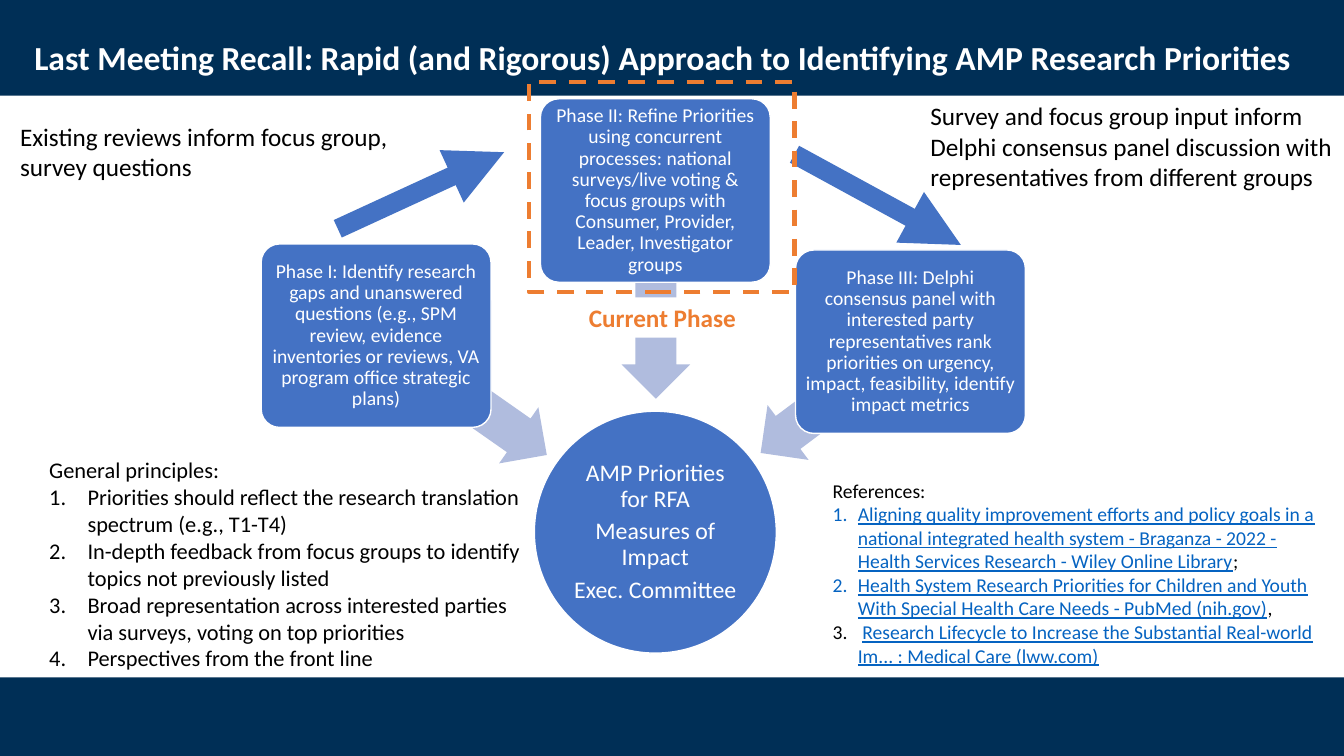
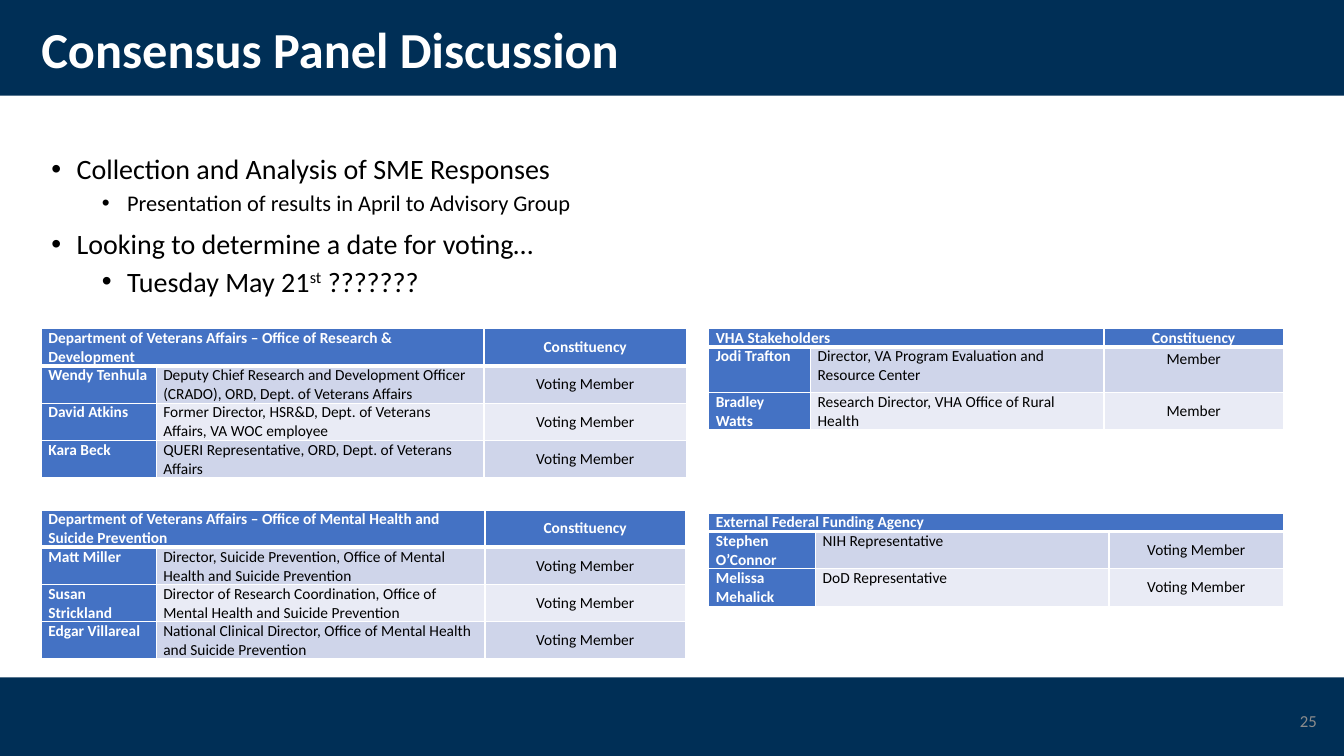
import pptx
import pptx.chart.data
import pptx.dml.color
import pptx.enum.dml
import pptx.enum.shapes
import pptx.enum.text
import pptx.oxml
import pptx.oxml.ns
import pptx.util
from lxml import etree

Inches, Pt = pptx.util.Inches, pptx.util.Pt
RGB = pptx.dml.color.RGBColor
SHAPE = pptx.enum.shapes.MSO_SHAPE
ALIGN = pptx.enum.text.PP_ALIGN
ANCHOR = pptx.enum.text.MSO_ANCHOR
qn = pptx.oxml.ns.qn

# Shared look
FONT = "Calibri"
NAVY, BLUE, PALE_BLUE = RGB(0x00, 0x2F, 0x56), RGB(0x44, 0x72, 0xC4), RGB(0xB0, 0xBC, 0xDE)
ORANGE, LINK, GREY = RGB(0xED, 0x7D, 0x31), RGB(0x05, 0x63, 0xC1), RGB(0x8C, 0x8C, 0x8C)
WHITE, BLACK = RGB(0xFF, 0xFF, 0xFF), RGB(0, 0, 0)
ROW_FILLS = [RGB(0xCF, 0xD5, 0xEA), RGB(0xE9, 0xEB, 0xF5)]
BANDS = [(0, 0, 13.33, 0.95), (0, 6.72, 13.33, 0.8)]

# Slide 1 content
RECALL_TITLE = "Last Meeting Recall: Rapid (and Rigorous) Approach to Identifying AMP Research Priorities"
OUTCOMES = ["AMP Priorities for RFA", "Measures of Impact", "Exec. Committee"]
PHASE_SIZE = (2.28, 1.82)
PHASES = [  # left and top of the phase, then place and turn of its arrow
    ((2.59, 2.42), (3.54, 3.58, 2.07, 0.68), 215,
     "Phase I: Identify research gaps and unanswered questions (e.g., SPM review, evidence "
     "inventories or reviews, VA program office strategic plans)"),
    ((5.36, 0.98), (5.47, 2.58, 2.07, 0.68), 270,
     "Phase II: Refine Priorities using concurrent processes: national surveys/live voting & "
     "focus groups with Consumer, Provider, Leader, Investigator groups"),
    ((7.89, 2.48), (7.36, 3.6, 1.85, 0.68), 323.2,
     "Phase III: Delphi consensus panel with interested party representatives rank priorities "
     "on urgency, impact, feasibility, identify impact metrics"),
]
PHASE_LINKS = [((3.35, 2.27), (5, 1.51)), ((7.88, 1.53), (9.53, 2.43))]
CAPTIONS = [
    ((9.13, 0.95, 4.2, 1.01), "Survey and focus group input inform Delphi consensus panel "
                              "discussion with representatives from different groups"),
    ((0.1, 1.15, 4.08, 0.71), "Existing reviews inform focus group, survey questions"),
]
REFERENCES = [  # text before, linked text, text after
    ("", "Aligning quality improvement efforts and policy goals in a national integrated health "
         "system - Braganza - 2022 - Health Services Research - Wiley Online Library", ";"),
    ("", "Health System Research Priorities for Children and Youth With Special Health Care "
         "Needs - PubMed (nih.gov)", ","),
    (" ", "Research Lifecycle to Increase the Substantial Real-world Im... : "
          "Medical Care (lww.com)", ""),
]
PRINCIPLES = [
    "Priorities should reflect the research translation spectrum (e.g., T1-T4)",
    "In-depth feedback from focus groups to identify topics not previously listed",
    "Broad representation across interested parties via surveys, voting on top priorities",
    "Perspectives from the front line",
]

# Slide 2 content
PANEL_TITLE = "Consensus Panel Discussion"
AGENDA = [  # level, size, text, superscript, text after
    (0, 20, "Collection and Analysis of SME Responses", "", ""),
    (1, 16, "Presentation of results in April to Advisory Group", "", ""),
    (0, 20, "Looking to determine a date for voting…", "", ""),
    (1, 20, "Tuesday May 21", "st", " ???????"),
]
VOTER = "Voting Member"
PANELS = [
    {"at": (0.41, 3.26), "columns": (1.14, 3.25, 2.01), "heights": (0.37,) * 4,
     "head": ("Department of Veterans Affairs – Office of Research & Development", "Constituency"),
     "members": [
         ("Wendy Tenhula", "Deputy Chief Research and Development Officer (CRADO), ORD, "
                           "Dept. of Veterans Affairs", VOTER),
         ("David Atkins", "Former Director, HSR&D, Dept. of Veterans Affairs, VA WOC employee", VOTER),
         ("Kara Beck", "QUERI Representative, ORD, Dept. of Veterans Affairs", VOTER)]},
    {"at": (0.41, 5.06), "columns": (1.14, 3.26, 1.99), "heights": (0.37,) * 4,
     "head": ("Department of Veterans Affairs – Office of Mental Health and Suicide Prevention",
              "Constituency"),
     "members": [
         ("Matt Miller", "Director, Suicide Prevention, Office of Mental Health and "
                         "Suicide Prevention", VOTER),
         ("Susan Strickland", "Director of Research Coordination, Office of Mental Health and "
                              "Suicide Prevention", VOTER),
         ("Edgar Villareal", "National Clinical Director, Office of Mental Health and "
                             "Suicide Prevention", VOTER)]},
    {"at": (7.03, 3.26), "columns": (1.01, 2.91, 1.78), "heights": (0.18, 0.45, 0.37),
     "head": ("VHA Stakeholders", "Constituency"), "raised_row": 1,
     "members": [
         ("Jodi Trafton", "Director, VA Program Evaluation and Resource Center", "Member"),
         ("Bradley Watts", "Research Director, VHA Office of Rural Health", "Member")]},
    {"at": (7.03, 5.09), "columns": (1.06, 2.91, 1.73), "heights": (0.18, 0.37, 0.37),
     "head": ("External Federal Funding Agency",),
     "members": [("Stephen O’Connor", "NIH Representative", VOTER),
                 ("Melissa Mehalick", "DoD Representative", VOTER)]},
]


def inches(values):
    return [Inches(value) for value in values]


def style(para, size, color=BLACK, bold=False, align=ALIGN.LEFT, spacing=None):
    para.alignment = align
    if spacing:
        para.line_spacing = spacing
    para.font.name, para.font.size = FONT, Pt(size)
    para.font.bold, para.font.color.rgb = bold, color


def add_bullet(para, tag, attribute, value, left, hang):
    props = para._p.get_or_add_pPr()
    props.set("marL", str(Inches(left)))
    props.set("indent", str(-Inches(hang)))
    etree.SubElement(props, qn(tag)).set(attribute, value)


def add_number(para, hang):
    add_bullet(para, "a:buAutoNum", "type", "arabicPeriod", hang, hang)


def paragraphs(frame, count):
    return [frame.paragraphs[0]] + [frame.add_paragraph() for _ in range(count - 1)]


def add_shape(page, kind, at, fill=None, line=None, width=1):
    shape = page.shapes.add_shape(kind, *inches(at))
    shape.shadow.inherit = False
    if fill is None:
        shape.fill.background()
    else:
        shape.fill.solid()
        shape.fill.fore_color.rgb = fill
    if line is None:
        shape.line.fill.background()
    else:
        shape.line.color.rgb, shape.line.width = line, Pt(width)
    return shape


def write_centred(shape, texts, size, margin):
    frame = shape.text_frame
    frame.word_wrap, frame.vertical_anchor = True, ANCHOR.MIDDLE
    frame.margin_left = frame.margin_right = frame.margin_top = frame.margin_bottom = Inches(margin)
    for para, text in zip(paragraphs(frame, len(texts)), texts):
        para.text = text
        if text != texts[-1]:
            para.space_after = Pt(5)
        style(para, size, WHITE, align=ALIGN.CENTER, spacing=0.9)


def add_text(page, at, text, size, color=BLACK, align=ALIGN.LEFT):
    frame = page.shapes.add_textbox(*inches(at)).text_frame
    frame.word_wrap = True
    frame.text = text
    style(frame.paragraphs[0], size, color, align=align)
    return frame


def place(holder, at):
    holder.left, holder.top, holder.width, holder.height = inches(at)
    holder.text_frame.auto_size = pptx.enum.text.MSO_AUTO_SIZE.NONE
    holder.text_frame.word_wrap = True


def add_page(deck, layout, title, at, size):
    page = deck.slides.add_slide(deck.slide_layouts[layout])
    holder = page.shapes.title
    place(holder, at)
    holder.text_frame.text = title
    holder.text_frame.vertical_anchor = ANCHOR.MIDDLE
    style(holder.text_frame.paragraphs[0], size, WHITE, bold=True, spacing=0.9)
    return page


def add_master_bands(deck, page):
    tree = deck.slide_master.shapes.element
    for index, at in enumerate(BANDS):
        band = add_shape(page, SHAPE.RECTANGLE, at, NAVY)
        band.element.nvSpPr.cNvPr.set("id", str(100 + index))
        tree.insert(2 + index, band.element)


def add_phase_link(page, start, end):
    link = page.shapes.add_connector(pptx.enum.shapes.MSO_CONNECTOR.STRAIGHT, *inches(start + end))
    link.line.color.rgb, link.line.width = BLUE, Pt(13.75)
    etree.SubElement(link.line._get_or_add_ln(), qn("a:tailEnd")).set("type", "triangle")
    etree.SubElement(link.element.spPr, qn("a:effectLst"))


def fill_cell(cell, text, fill, color, bold, centred, header):
    cell.fill.solid()
    cell.fill.fore_color.rgb = fill
    cell.margin_left = cell.margin_right = Inches(0.07)
    cell.margin_top = cell.margin_bottom = 0
    cell.vertical_anchor = ANCHOR.MIDDLE if centred else ANCHOR.TOP
    cell.text = text
    style(cell.text_frame.paragraphs[0], 11, color, bold, ALIGN.CENTER if centred else ALIGN.LEFT)
    props = cell._tc.get_or_add_tcPr()
    for index, side in enumerate("LRTB"):
        border = etree.Element(qn("a:ln" + side), w=str(Pt(3 if header and side == "B" else 1)))
        solid = etree.SubElement(border, qn("a:solidFill"))
        etree.SubElement(solid, qn("a:srgbClr")).set("val", str(WHITE))
        props.insert(index, border)


def add_panel(page, panel):
    columns, heights, head = panel["columns"], panel["heights"], panel["head"]
    size = (sum(columns), sum(heights))
    table = page.shapes.add_table(len(heights), 3, *inches(panel["at"] + size)).table
    table.first_col, table.horz_banding = True, False
    for column, width in zip(table.columns, columns):
        column.width = Inches(width)
    for row, height in zip(table.rows, heights):
        row.height = Inches(height)
    head_cells = (head[0], "", head[1] if len(head) > 1 else "")
    for row, texts in enumerate([head_cells] + panel["members"]):
        for column, text in enumerate(texts):
            strong = row == 0 or column == 0
            fill_cell(table.cell(row, column), text, BLUE if strong else ROW_FILLS[(row - 1) % 2],
                      WHITE if strong else BLACK, strong, column == 2, row == 0)
    table.cell(0, 0).merge(table.cell(0, 2 - (len(head) > 1)))
    if "raised_row" in panel:
        raised = table.cell(panel["raised_row"], 2)
        raised.vertical_anchor, raised.margin_top = ANCHOR.TOP, Inches(0.03)


def build_recall(page):
    # Phases around the outcome circle
    circle = add_shape(page, SHAPE.OVAL, (5.3, 4.08, 2.4, 2.4), BLUE, WHITE)
    write_centred(circle, OUTCOMES, 17, 0.01)
    for corner, arrow_at, turn, text in PHASES:
        arrow = add_shape(page, SHAPE.LEFT_ARROW, arrow_at, PALE_BLUE)
        arrow.rotation, arrow.adjustments[0] = turn, 0.6
        phase = add_shape(page, SHAPE.ROUNDED_RECTANGLE, corner + PHASE_SIZE, BLUE, WHITE)
        phase.adjustments[0] = 0.1
        write_centred(phase, [text], 14, 0.03)
    for start, end in PHASE_LINKS:
        add_phase_link(page, start, end)
    for at, text in CAPTIONS:
        add_text(page, at, text, 18)

    # Numbered lists
    frame = add_text(page, (8.16, 4.7, 5, 1.99), "References:", 14)
    for before, linked, after in REFERENCES:
        para = frame.add_paragraph()
        add_number(para, 0.25)
        style(para, 14)
        for text in filter(None, (before, linked, after)):
            span = para.add_run()
            span.text = text
            if text == linked:
                span.font.color.rgb, span.font.underline = LINK, True
    frame = add_text(page, (0.39, 4.48, 5, 2.5), "General principles:", 16)
    for text in PRINCIPLES:
        para = frame.add_paragraph()
        para.text = text
        add_number(para, 0.38)
        style(para, 16)

    # Current phase marker
    marker = add_shape(page, SHAPE.RECTANGLE, (5.25, 0.81, 2.63, 2.09), line=ORANGE, width=3)
    marker.line.dash_style = pptx.enum.dml.MSO_LINE.DASH
    label = add_shape(page, SHAPE.RECTANGLE, (5.39, 2.95, 2.36, 0.4), WHITE)
    label.text_frame.text = "Current Phase"
    style(label.text_frame.paragraphs[0], 18, ORANGE, True, ALIGN.CENTER)


def build_panel_discussion(page):
    body = page.placeholders[1]
    place(body, (0.41, 1.49, 11.5, 1.7))
    lines = paragraphs(body.text_frame, len(AGENDA))
    for index, (para, (level, size, text, raised, after)) in enumerate(zip(lines, AGENDA)):
        para.level = level
        add_bullet(para, "a:buChar", "char", "•", 0.25 + 0.5 * level, 0.25)
        para.space_before = Pt((5 if level else 10) if index else 0)
        style(para, size, spacing=0.9)
        for part in filter(None, (text, raised, after)):
            span = para.add_run()
            span.text = part
            if part == raised:
                span._r.get_or_add_rPr().set("baseline", "30000")
    number = add_text(page, (10.16, 6.95, 3, 0.4), "25", 12, GREY, ALIGN.RIGHT)
    number.vertical_anchor = ANCHOR.MIDDLE
    for panel in PANELS:
        add_panel(page, panel)


def main():
    deck = pptx.Presentation()
    deck.slide_width, deck.slide_height = Inches(13.33), Inches(7.5)
    recall = add_page(deck, 5, RECALL_TITLE, (0.24, -0.13, 13, 1.45), 24)
    add_master_bands(deck, recall)
    build_recall(recall)
    build_panel_discussion(add_page(deck, 1, PANEL_TITLE, (0.31, 0.18, 11.5, 0.68), 36))
    deck.save("out.pptx")


if __name__ == "__main__":
    main()
